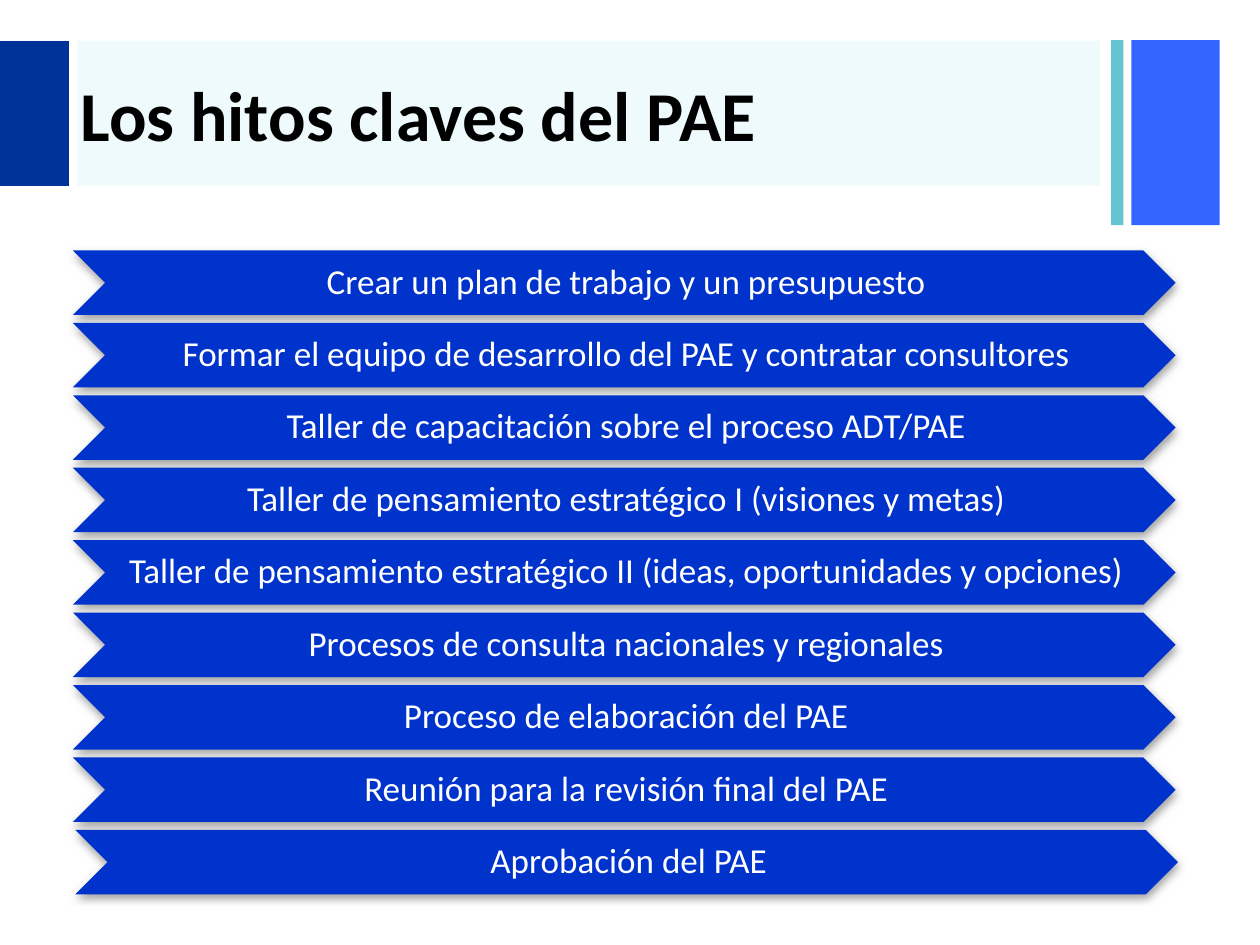
from dataclasses import dataclass

from lxml.etree import SubElement
from pptx import Presentation
from pptx.dml.color import RGBColor
from pptx.enum.shapes import MSO_SHAPE as Shape
from pptx.enum.text import MSO_ANCHOR as Anchor, PP_ALIGN as Align
from pptx.oxml.ns import qn
from pptx.util import Cm, Pt

COLORS = {
    "navy": "003399",
    "blue": "3366FF",
    "teal": "65C4D2",
    "tint": "14C5D0",
    "chevron": "0033CC",
    "shadow": "808080",
    "title": "000000",
    "text": "FFFFFF",
}
FONT = "Calibri"
LEFT, TOP, WIDTH, HEIGHT, PITCH = 1.47, 5.05, 22.23, 1.3, 1.46


@dataclass
class Bar:
    left: float
    top: float
    width: float
    height: float
    color: str
    opacity: int = 100


@dataclass
class Milestone:
    text: str
    shift: float = 0


BARS = [
    Bar(22.81, 0.81, 1.78, 3.73, "blue"),
    Bar(22.4, 0.81, 0.25, 3.73, "teal"),
    Bar(1.55, 0.82, 20.62, 2.92, "tint", 7),
    Bar(0, 0.83, 1.39, 2.92, "navy"),
]
MILESTONES = [
    Milestone("Crear un plan de trabajo y un presupuesto"),
    Milestone("Formar el equipo de desarrollo del PAE y contratar consultores"),
    Milestone("Taller de capacitación sobre el proceso ADT/PAE"),
    Milestone("Taller de pensamiento estratégico I (visiones y metas)"),
    Milestone("Taller de pensamiento estratégico II (ideas, oportunidades y opciones)"),
    Milestone("Procesos de consulta nacionales y regionales"),
    Milestone("Proceso de elaboración del PAE"),
    Milestone("Reunión para la revisión final del PAE"),
    Milestone("Aprobación del PAE", 0.05),
]


def add_filled(s, kind, bar: Bar):
    sp = s.shapes.add_shape(
        kind, Cm(bar.left), Cm(bar.top), Cm(bar.width), Cm(bar.height))
    sp.shadow.inherit = False
    sp.fill.solid()
    sp.fill.fore_color.rgb = RGBColor.from_string(COLORS[bar.color])
    sp.line.fill.background()
    if bar.opacity < 100:
        color = sp.element.spPr.find(qn("a:solidFill"))[0]
        SubElement(color, qn("a:alpha"), val=str(bar.opacity * 1000))
    return sp


def add_shadow(sp) -> None:
    effects = sp.element.spPr.find(qn("a:effectLst"))
    shadow = SubElement(
        effects, qn("a:outerShdw"), blurRad=str(Pt(5)), dist=str(Pt(2)),
        dir="5400000", algn="ctr", rotWithShape="0")
    color = SubElement(shadow, qn("a:srgbClr"), val=COLORS["shadow"])
    SubElement(color, qn("a:alpha"), val="75000")


def set_text(tf, text: str, size: int, color: str, align, bold: bool) -> None:
    tf.text = text
    tf.word_wrap = True
    tf.vertical_anchor = Anchor.MIDDLE
    p = tf.paragraphs[0]
    p.alignment = align
    font = p.runs[0].font
    font.name, font.size, font.bold = FONT, Pt(size), bold
    font.color.rgb = RGBColor.from_string(COLORS[color])


def add_title(s, text: str) -> None:
    title = s.shapes.title
    title.left, title.top = Cm(1.37), Cm(0.86)
    title.width, title.height = Cm(21), Cm(2.84)
    set_text(title.text_frame, text, 40, "title", Align.LEFT, True)
    title.element.getparent().append(title.element)


def add_milestone(s, index: int, item: Milestone) -> None:
    bar = Bar(LEFT + item.shift, TOP + index * PITCH, WIDTH, HEIGHT, "chevron")
    sp = add_filled(s, Shape.CHEVRON, bar)
    add_shadow(sp)
    tf = sp.text_frame
    tf.margin_left, tf.margin_right = Cm(0.08), 0
    tf.margin_top = tf.margin_bottom = Cm(0.03)
    set_text(tf, item.text, 20, "text", Align.CENTER, False)
    tf.paragraphs[0].line_spacing = 0.9


def main() -> None:
    prs = Presentation()
    prs.slide_width, prs.slide_height = Cm(25.4), Cm(19.05)
    s = prs.slides.add_slide(prs.slide_layouts[5])
    for bar in BARS:
        add_filled(s, Shape.RECTANGLE, bar)
    add_title(s, "Los hitos claves del PAE")
    for index, item in enumerate(MILESTONES):
        add_milestone(s, index, item)
    prs.save("out.pptx")


if __name__ == "__main__":
    main()
